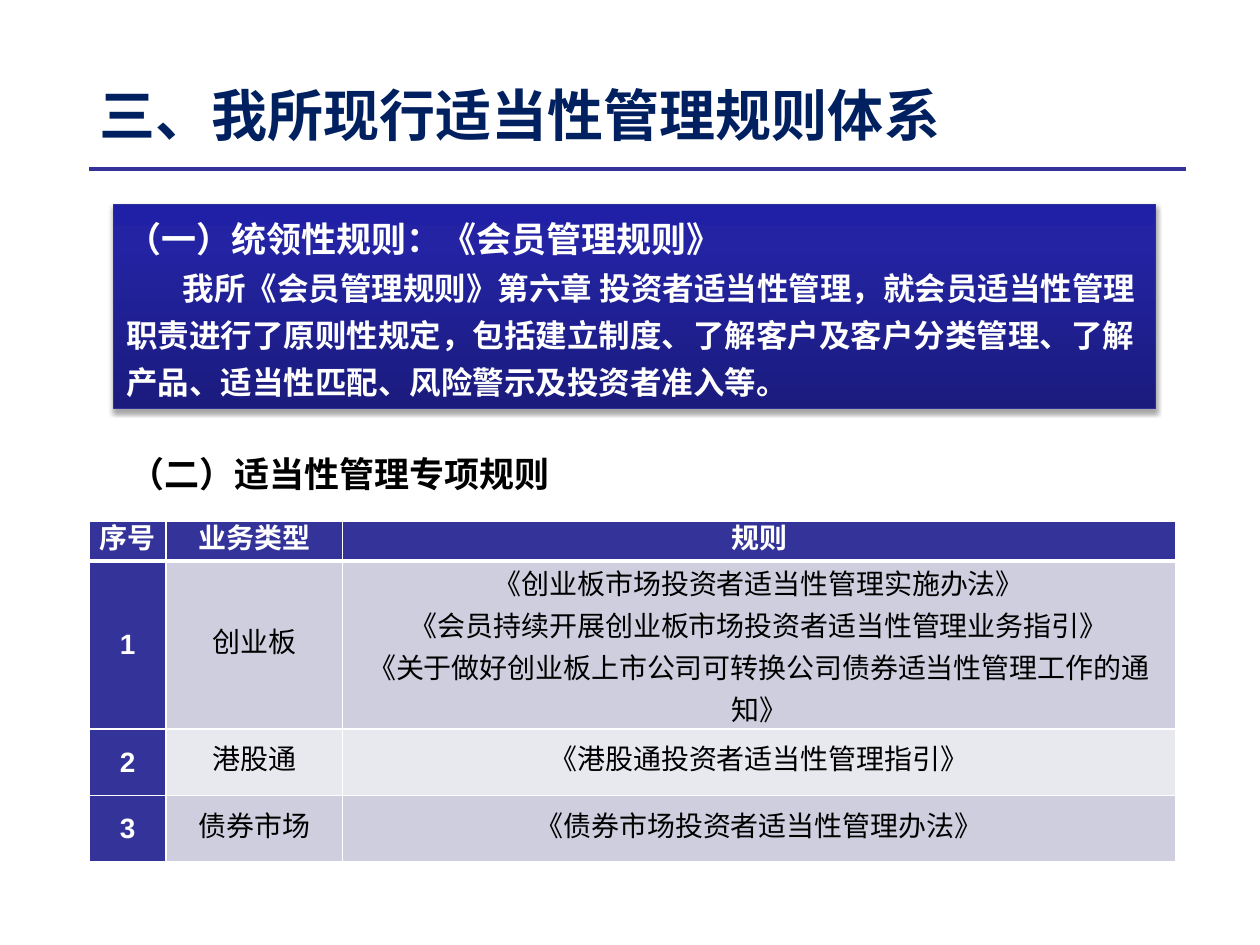
from lxml import etree
from pptx import Presentation
from pptx import util as u
from pptx.dml.color import RGBColor
from pptx.enum import shapes, text
from pptx.oxml import parse_xml
from pptx.oxml.ns import nsdecls, qn

COLORS = {
    "title": "002060", "rule": "333399", "white": "FFFFFF", "black": "000000",
    "band": "CECEDE", "plain": "E8E8EF", "panel_line": "2F2F98",
    "panel_bottom": "1B1B7E", "panel_middle": "2323A3", "panel_top": "2020A6",
}
CJK = "Noto Sans CJK SC"
LATIN = "Arial"


def color(name):
    return RGBColor.from_string(COLORS[name])


def write(para, words, size=16, ink="black", bold=False, face=CJK,
          align=text.PP_ALIGN.LEFT, spacing=None, indent=0):
    para.alignment = align
    if spacing:
        para.line_spacing = u.Pt(spacing)
    if indent:
        properties = para._p.get_or_add_pPr()
        properties.set("marL", "0")
        properties.set("indent", str(u.Pt(indent)))
    span = para.add_run()
    span.text = words
    span.font.size = u.Pt(size)
    span.font.bold = bold
    span.font.color.rgb = color(ink)
    span.font.name = face
    etree.SubElement(span._r.get_or_add_rPr(), qn("a:ea")).set("typeface", CJK)


class Builder:
    def __init__(self, page):
        self.page = page

    def frame(self, box, margins, anchor, wrap=True):
        frame = box.text_frame
        frame.word_wrap = wrap
        frame.auto_size = text.MSO_AUTO_SIZE.NONE
        frame.vertical_anchor = anchor
        frame.margin_left = frame.margin_right = u.Pt(margins[0])
        frame.margin_top = frame.margin_bottom = u.Pt(margins[1])
        return frame

    def title(self, words, left, top, width, height):
        box = self.page.shapes.title
        box.left, box.top, box.width, box.height = map(u.Pt, (left, top, width, height))
        frame = self.frame(box, (6, 3), text.MSO_ANCHOR.TOP)
        write(frame.paragraphs[0], words, size=32, ink="title", bold=True)

    def rule(self, left, right, y):
        line = self.page.shapes.add_connector(
            shapes.MSO_CONNECTOR.STRAIGHT, u.Pt(left), u.Pt(y), u.Pt(right), u.Pt(y))
        line.line.color.rgb = color("rule")
        line.line.width = u.Pt(2)
        etree.SubElement(line._element.spPr, qn("a:effectLst"))

    def panel(self, paragraphs, left, top, width, height):
        box = self.page.shapes.add_shape(
            shapes.MSO_SHAPE.RECTANGLE, *map(u.Pt, (left, top, width, height)))
        box.line.color.rgb = color("panel_line")
        box.line.width = u.Pt(0.75)
        stops = ((0, "panel_bottom"), (80, "panel_middle"), (100, "panel_top"))
        stop_xml = "".join(
            f'<a:gs pos="{place * 1000}"><a:srgbClr val="{COLORS[name]}"/></a:gs>'
            for place, name in stops)
        box._element.spPr.find(qn("a:ln")).addprevious(parse_xml(
            f'<a:gradFill {nsdecls("a")} rotWithShape="1"><a:gsLst>{stop_xml}</a:gsLst>'
            '<a:lin ang="16200000" scaled="0"/></a:gradFill>'))
        box._element.spPr.append(parse_xml(
            f'<a:effectLst {nsdecls("a")}><a:outerShdw blurRad="{u.Pt(3.1)}" '
            f'dist="{u.Pt(1.8)}" dir="5400000" rotWithShape="0">'
            f'<a:srgbClr val="{COLORS["black"]}"><a:alpha val="35000"/></a:srgbClr>'
            '</a:outerShdw></a:effectLst>'))
        frame = self.frame(box, (7.2, 3.6), text.MSO_ANCHOR.MIDDLE)
        for number, (words, size, indent) in enumerate(paragraphs):
            para = frame.add_paragraph() if number else frame.paragraphs[0]
            write(para, words, size=size, ink="white", bold=True, spacing=27, indent=indent)

    def heading(self, words, left, top, width, height):
        box = self.page.shapes.add_textbox(*map(u.Pt, (left, top, width, height)))
        frame = self.frame(box, (7.2, 3.6), text.MSO_ANCHOR.MIDDLE, wrap=False)
        write(frame.paragraphs[0], words, size=20, bold=True, indent=30)

    def borders(self, cell, row):
        thick = {0: "lnB", 1: "lnT"}.get(row)
        for side in ("lnL", "lnR", "lnT", "lnB"):
            width = 3 if side == thick else 1
            cell._tc.get_or_add_tcPr().append(parse_xml(
                f'<a:{side} {nsdecls("a")} w="{u.Pt(width)}"><a:solidFill>'
                f'<a:srgbClr val="{COLORS["white"]}"/></a:solidFill></a:{side}>'))

    def table(self, rows, left, top, widths, heights):
        grid = self.page.shapes.add_table(
            len(rows), len(widths),
            *map(u.Pt, (left, top, sum(widths), sum(heights)))).table
        for column, width in zip(grid.columns, widths):
            column.width = u.Pt(width)
        for row, height in zip(grid.rows, heights):
            row.height = u.Pt(height)
        for i, values in enumerate(rows):
            for j, value in enumerate(values):
                cell = grid.cell(i, j)
                is_head = i == 0 or j == 0
                self.borders(cell, i)
                cell.fill.solid()
                cell.fill.fore_color.rgb = color(
                    "rule" if is_head else "band" if i % 2 else "plain")
                cell.vertical_anchor = text.MSO_ANCHOR.MIDDLE
                cell.margin_left = cell.margin_right = u.Pt(5)
                cell.margin_top = cell.margin_bottom = 0
                lines = value.split("\n")
                for number, words in enumerate(lines):
                    frame = cell.text_frame
                    para = frame.add_paragraph() if number else frame.paragraphs[0]
                    write(para, words, ink="white" if is_head else "black",
                          bold=is_head, face=LATIN, align=text.PP_ALIGN.CENTER,
                          spacing=24 if len(lines) > 1 else 18)


def main():
    deck = Presentation()
    deck.slide_width, deck.slide_height = u.Pt(720), u.Pt(540)
    page = deck.slides.add_slide(deck.slide_layouts[5])
    builder = Builder(page)
    builder.rule(51, 677.5, 96.5)
    builder.table([
        ("序号", "业务类型", "规则"),
        ("1", "创业板", "《创业板市场投资者适当性管理实施办法》\n"
                        "《会员持续开展创业板市场投资者适当性管理业务指引》\n"
                        "《关于做好创业板上市公司可转换公司债券适当性管理工作的通知》"),
        ("2", "港股通", "《港股通投资者适当性管理指引》"),
        ("3", "债券市场", "《债券市场投资者适当性管理办法》"),
    ], 51, 298, (44, 100.8, 476), (22.5, 88.5, 38, 38))
    builder.heading("（二）适当性管理专项规则", 36.7, 255, 288.7, 31.5)
    builder.title("三、我所现行适当性管理规则体系", 51, 43.2, 558.7, 83.5)
    builder.panel([
        ("（一）统领性规则：《会员管理规则》", 20, 0),
        ("我所《会员管理规则》第六章 投资者适当性管理，就会员适当性管理职责进行了原则性规定，"
         "包括建立制度、了解客户及客户分类管理、了解产品、适当性匹配、风险警示及投资者准入等。",
         18, 32.5),
    ], 65, 116.7, 595.5, 116.7)
    deck.save("out.pptx")


if __name__ == "__main__":
    main()
